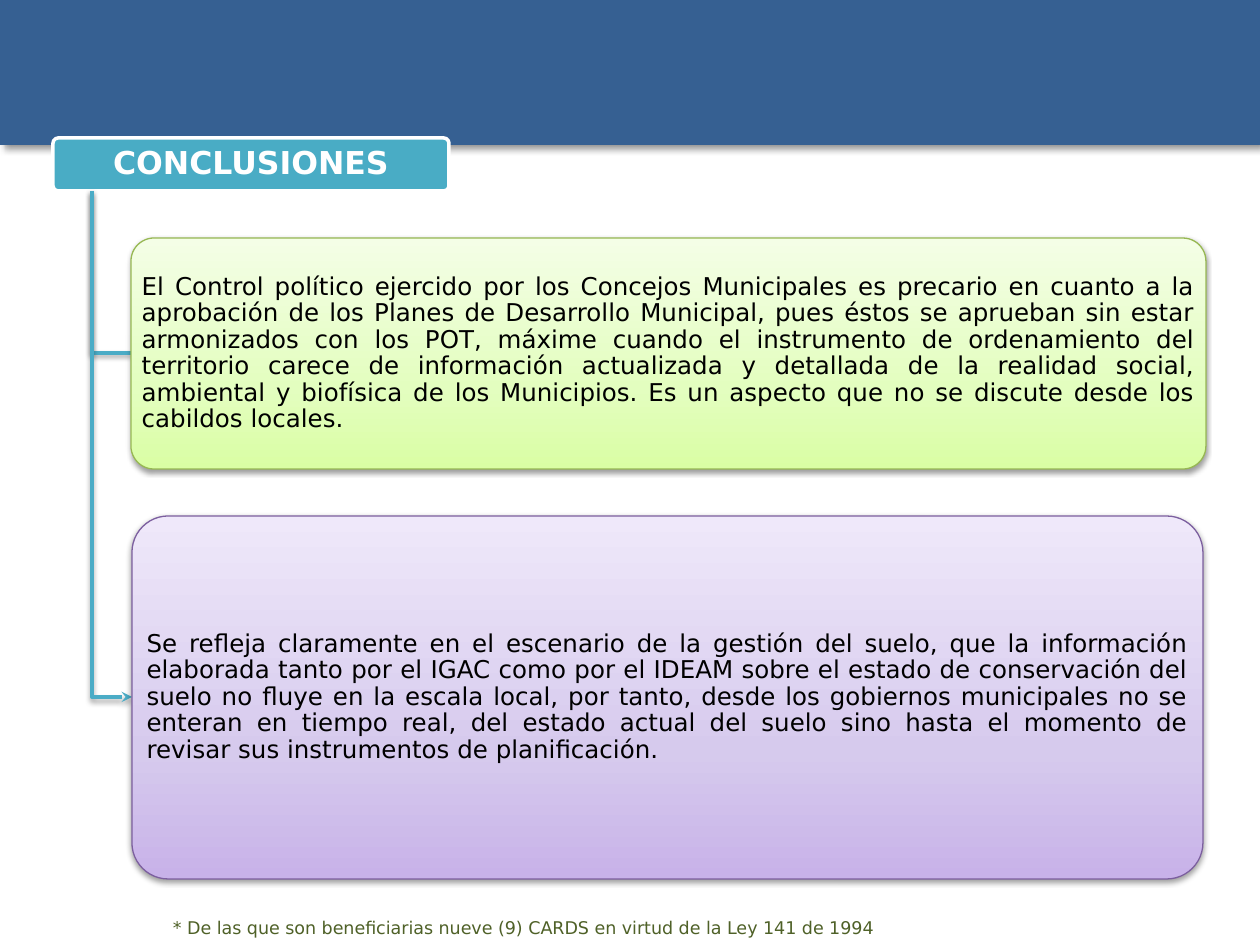
from dataclasses import dataclass

from pptx import Presentation
from pptx.dml.color import RGBColor
from pptx.enum.shapes import MSO_SHAPE
from pptx.enum.text import MSO_ANCHOR, PP_ALIGN
from pptx.oxml.ns import qn
from pptx.util import Pt
from lxml.etree import SubElement

PX = 914400 // 126


@dataclass(frozen=True)
class Theme:
    font: str = "DejaVu Sans"
    head: str = "366092"
    title: str = "49ACC5"
    link: str = "4BACC6"
    white: str = "FFFFFF"
    ink: str = "000000"
    note: str = "4F6128"
    green: tuple = ("DAFEA4", "E3FEBF", "F4FEE6")
    green_edge: str = "97B853"
    purple: tuple = ("C8B2E9", "D6CAED", "EFE8FA")
    purple_edge: str = "7C5F9F"
    big: int = 18
    body: int = 14
    small: int = 10


T = Theme()

POINTS = [
    ((131, 238, 1075, 231), T.green, T.green_edge,
     "El Control político ejercido por los Concejos Municipales es precario en "
     "cuanto a la aprobación de los Planes de Desarrollo Municipal, pues éstos se "
     "aprueban sin estar armonizados con los POT, máxime cuando el instrumento de "
     "ordenamiento del territorio carece de información actualizada y detallada de "
     "la realidad social, ambiental y biofísica de los Municipios. Es un aspecto que "
     "no se discute desde los cabildos locales."),
    ((132, 516, 1071, 363), T.purple, T.purple_edge,
     "Se refleja claramente en el escenario de la gestión del suelo, que la "
     "información elaborada tanto por el IGAC como por el IDEAM sobre el estado de "
     "conservación del suelo no fluye en la escala local, por tanto, desde los "
     "gobiernos municipales no se enteran en tiempo real, del estado actual del suelo "
     "sino hasta el momento de revisar sus instrumentos de planificación."),
]


def rgb(code):
    return RGBColor.from_string(code)


def emu(box):
    return [n * PX for n in box]


def edge(shape, color, width):
    shape.line.color.rgb = rgb(color)
    shape.line.width = Pt(width)


def shade(shape, alpha=38, blur=3.1, dist=1.6, angle=90):
    """Give the shape an outer shadow; lengths are in points."""
    shape.shadow.inherit = False
    effects = shape._element.spPr.find(qn("a:effectLst"))
    outer = SubElement(effects, qn("a:outerShdw"), blurRad=str(Pt(blur)),
                       dist=str(Pt(dist)), dir=str(angle * 60000), rotWithShape="0")
    color = SubElement(outer, qn("a:srgbClr"), val=T.ink)
    SubElement(color, qn("a:alpha"), val=str(alpha * 1000))


def blend(shape, colors):
    """Fill with a gradient that rises from the bottom edge."""
    shape.fill.gradient()
    shape.fill.gradient_angle = 90
    stops = shape._element.spPr.find(qn("a:gradFill")).find(qn("a:gsLst"))
    for old in list(stops):
        stops.remove(old)
    for place, code in zip((0, 35, 100), colors):
        stop = SubElement(stops, qn("a:gs"), pos=str(place * 1000))
        SubElement(stop, qn("a:srgbClr"), val=code)


def write(shape, text, size=T.body, color=T.ink, bold=False, align=PP_ALIGN.LEFT,
          anchor=MSO_ANCHOR.MIDDLE, spacing=0.9, inset=(4, 3)):
    frame = shape.text_frame
    frame.word_wrap = True
    frame.vertical_anchor = anchor
    frame.margin_left = frame.margin_right = inset[0] * PX
    frame.margin_top = frame.margin_bottom = inset[1] * PX
    para = frame.paragraphs[0]
    para.alignment = align
    para.line_spacing = spacing
    run = para.add_run()
    run.text = text
    font = run.font
    font.name, font.size, font.bold = T.font, Pt(size), bold
    font.color.rgb = rgb(color)


def band(slide, box):
    shape = slide.shapes.add_shape(MSO_SHAPE.RECTANGLE, *emu(box))
    shape.fill.solid()
    shape.fill.fore_color.rgb = rgb(T.head)
    shape.line.fill.background()
    shade(shape, alpha=40, blur=4, dist=3, angle=45)


def panel(slide, box):
    shape = slide.shapes.add_shape(MSO_SHAPE.ROUNDED_RECTANGLE, *emu(box))
    shape.adjustments[0] = 0.1
    return shape


def title(slide, box, text):
    shape = panel(slide, box)
    shape.shadow.inherit = False
    shape.fill.solid()
    shape.fill.fore_color.rgb = rgb(T.title)
    edge(shape, T.white, 2)
    write(shape, text, size=T.big, color=T.white, bold=True, align=PP_ALIGN.CENTER)


def branch(slide, root, box, arrow):
    """Draw an elbow from the root down to the middle of the box's left side."""
    left, top, _, height = box
    mid = top + height // 2
    path = slide.shapes.build_freeform(*root, scale=PX)
    path.add_line_segments([(root[0], mid), (left, mid)], close=False)
    shape = path.convert_to_shape()
    shape.fill.background()
    edge(shape, T.link, 2)
    if arrow:
        SubElement(shape.line._get_or_add_ln(), qn("a:tailEnd"), type="stealth")
    shade(shape)


def point(slide, box, colors, border, text):
    shape = panel(slide, box)
    blend(shape, colors)
    edge(shape, border, 0.75)
    shade(shape)
    write(shape, text, align=PP_ALIGN.JUSTIFY)


def note(slide, box, text):
    shape = slide.shapes.add_textbox(*emu(box))
    write(shape, text, size=T.small, color=T.note, anchor=MSO_ANCHOR.TOP,
          spacing=1.0, inset=(13, 6))


def tree(slide, box, text, points):
    """Place the title with its points hanging from it."""
    left, top, width, height = box
    root = (left + width // 10, top + height)
    title(slide, box, text)
    for item in points:
        branch(slide, root, item[0], arrow=item is points[-1])
        point(slide, *item)


def main():
    deck = Presentation()
    deck.slide_width, deck.slide_height = emu((1260, 945))
    slide = deck.slides.add_slide(deck.slide_layouts[6])
    band(slide, (0, 0, 1260, 145))
    tree(slide, (53, 138, 396, 53), "CONCLUSIONES", POINTS)
    note(slide, (160, 911, 747, 34),
         "* De las que son beneficiarias nueve (9) CARDS en virtud de la Ley 141 de 1994")
    deck.save("out.pptx")


if __name__ == "__main__":
    main()
